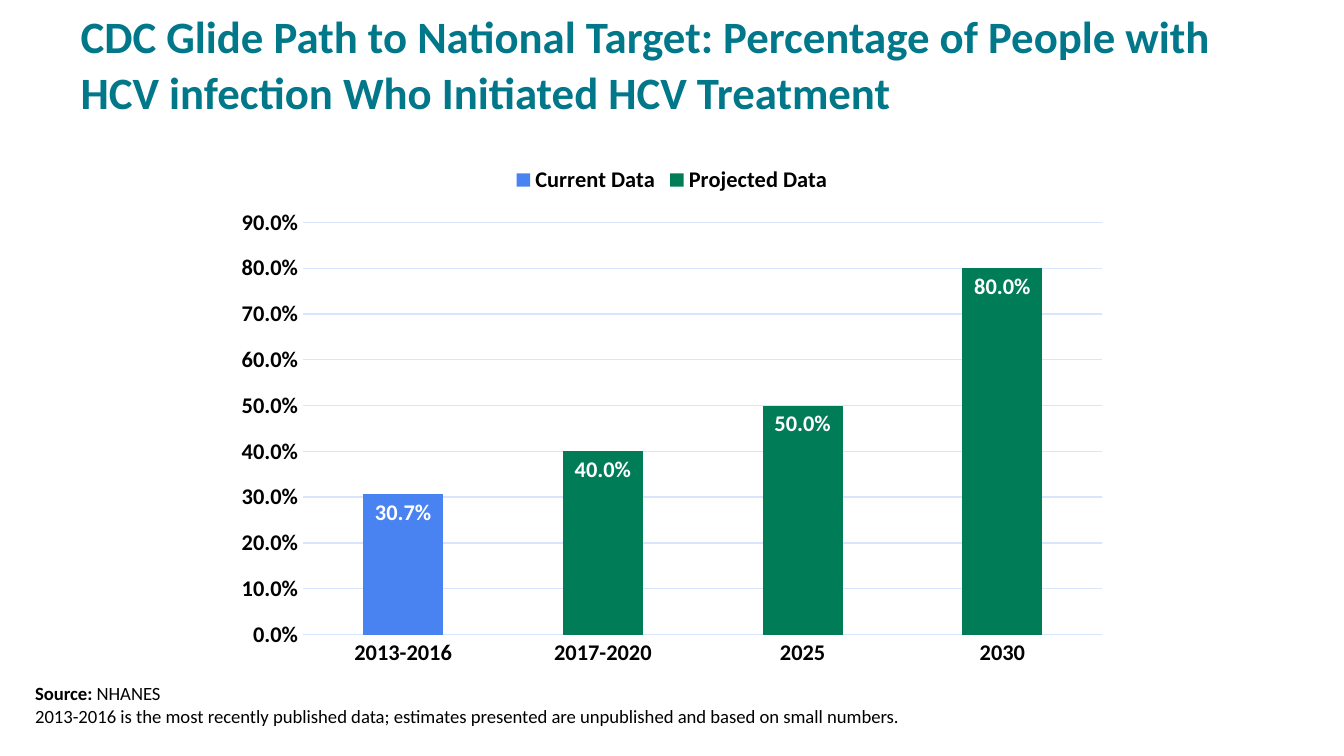
import pptx
import pptx.chart.data
import pptx.dml.color
import pptx.enum.chart
import pptx.enum.text
import pptx.util

# A 16:9 slide
WIDTH = pptx.util.Inches(10)
HEIGHT = WIDTH * 9 // 16
FONT = "Calibri"
TEAL, BLUE, GREEN = "00788A", "4983F2", "007D57"
BLACK, WHITE, PALE_BLUE = "000000", "FFFFFF", "D8E5FC"
PERCENT = "0.0%"

PERIODS = ["2013-2016", "2017-2020", "2025", "2030"]
SERIES = [
    ("Current Data", [0.307, None, None, None], BLUE),
    ("Projected Data", [None, 0.4, 0.5, 0.8], GREEN),
]


def color(hex_string):
    return pptx.dml.color.RGBColor.from_string(hex_string)


def box(left, top, width, height):
    """Turn percentages of the slide's size into lengths."""
    return [int(share * side / 100) for share, side in
            ((left, WIDTH), (top, HEIGHT), (width, WIDTH), (height, HEIGHT))]


def format_font(font, size=12, hex_color=BLACK, bold=True):
    font.name = FONT
    font.size = pptx.util.Pt(size)
    font.bold = bold
    font.color.rgb = color(hex_color)


def write(paragraph, text, **font_format):
    run = paragraph.add_run()
    run.text = text
    format_font(run.font, **font_format)


def format_line(line, hex_color):
    line.color.rgb = color(hex_color)
    line.width = pptx.util.Pt(0.75)


def add_title(slide, text):
    title = slide.shapes.title
    title.left, title.top, title.width, title.height = box(5, 4, 88.1, 12.6)
    frame = title.text_frame
    frame.word_wrap = True
    frame.auto_size = pptx.enum.text.MSO_AUTO_SIZE.NONE
    frame.vertical_anchor = pptx.enum.text.MSO_ANCHOR.BOTTOM
    paragraph = frame.paragraphs[0]
    paragraph.alignment = pptx.enum.text.PP_ALIGN.LEFT
    paragraph.line_spacing = pptx.util.Pt(30)
    write(paragraph, text, size=24, hex_color=TEAL)


def format_axes(chart):
    for axis in (chart.category_axis, chart.value_axis):
        axis.major_tick_mark = pptx.enum.chart.XL_TICK_MARK.NONE
        axis.minor_tick_mark = pptx.enum.chart.XL_TICK_MARK.NONE
        format_font(axis.tick_labels.font)
    format_line(chart.category_axis.format.line, PALE_BLUE)

    values = chart.value_axis
    values.minimum_scale, values.maximum_scale, values.major_unit = 0, 0.9, 0.1
    values.tick_labels.number_format = PERCENT
    values.tick_labels.number_format_is_linked = False
    values.format.line.fill.background()
    format_line(values.major_gridlines.format.line, PALE_BLUE)


def format_series(series, hex_color):
    series.format.fill.solid()
    series.format.fill.fore_color.rgb = color(hex_color)
    labels = series.data_labels
    labels.show_value = True
    labels.number_format = PERCENT
    labels.number_format_is_linked = False
    labels.position = pptx.enum.chart.XL_LABEL_POSITION.INSIDE_END
    format_font(labels.font, hex_color=WHITE)


def add_column_chart(slide):
    data = pptx.chart.data.CategoryChartData(number_format=PERCENT)
    data.categories = PERIODS
    for name, values, _ in SERIES:
        data.add_series(name, values)
    chart = slide.shapes.add_chart(
        pptx.enum.chart.XL_CHART_TYPE.COLUMN_STACKED,
        *box(16.65, 20.05, 66.7, 69.5), data).chart
    chart.has_title = False
    format_font(chart.font)
    chart.has_legend = True
    chart.legend.position = pptx.enum.chart.XL_LEGEND_POSITION.TOP
    chart.legend.include_in_layout = False
    format_font(chart.legend.font)
    format_axes(chart)

    plot = chart.plots[0]
    plot.gap_width, plot.overlap = 150, 100
    plot.vary_by_categories = False
    for series, (_, _, hex_color) in zip(plot.series, SERIES):
        format_series(series, hex_color)


def add_source_note(slide, source, remark):
    frame = slide.shapes.add_textbox(*box(1.63, 89.35, 91.7, 7.8)).text_frame
    frame.word_wrap = True
    first = frame.paragraphs[0]
    write(first, "Source: ", size=10)
    write(first, source, size=10, bold=False)
    write(frame.add_paragraph(), remark, size=10, bold=False)


def main():
    presentation = pptx.Presentation()
    presentation.slide_width, presentation.slide_height = WIDTH, HEIGHT
    slide = presentation.slides.add_slide(presentation.slide_layouts[5])
    add_title(slide, "CDC Glide Path to National Target: Percentage of People with "
                     "HCV infection Who Initiated HCV Treatment")
    add_source_note(slide, "NHANES",
                    "2013-2016 is the most recently published data; estimates "
                    "presented are unpublished and based on small numbers.")
    add_column_chart(slide)
    presentation.save("out.pptx")


if __name__ == "__main__":
    main()
